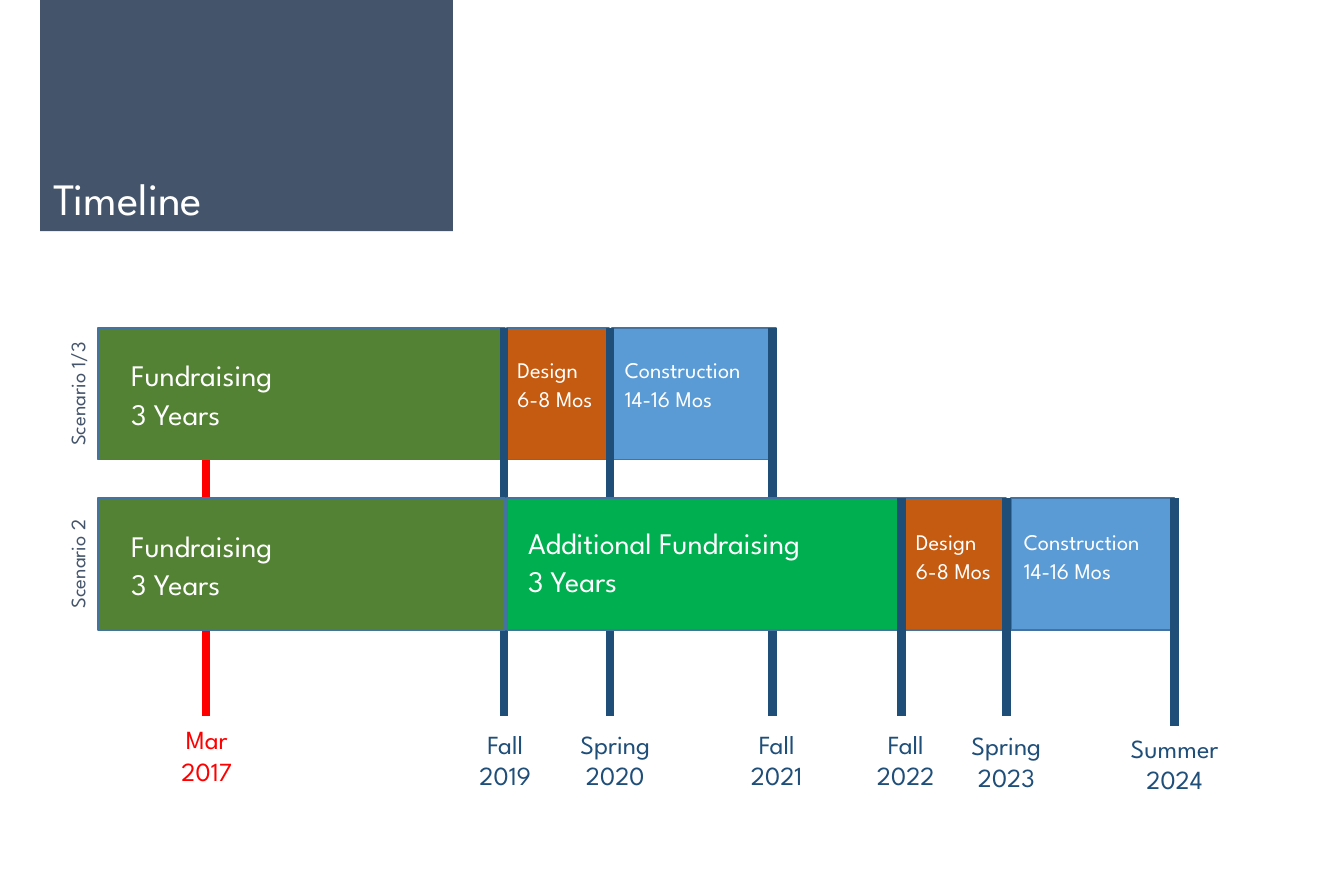
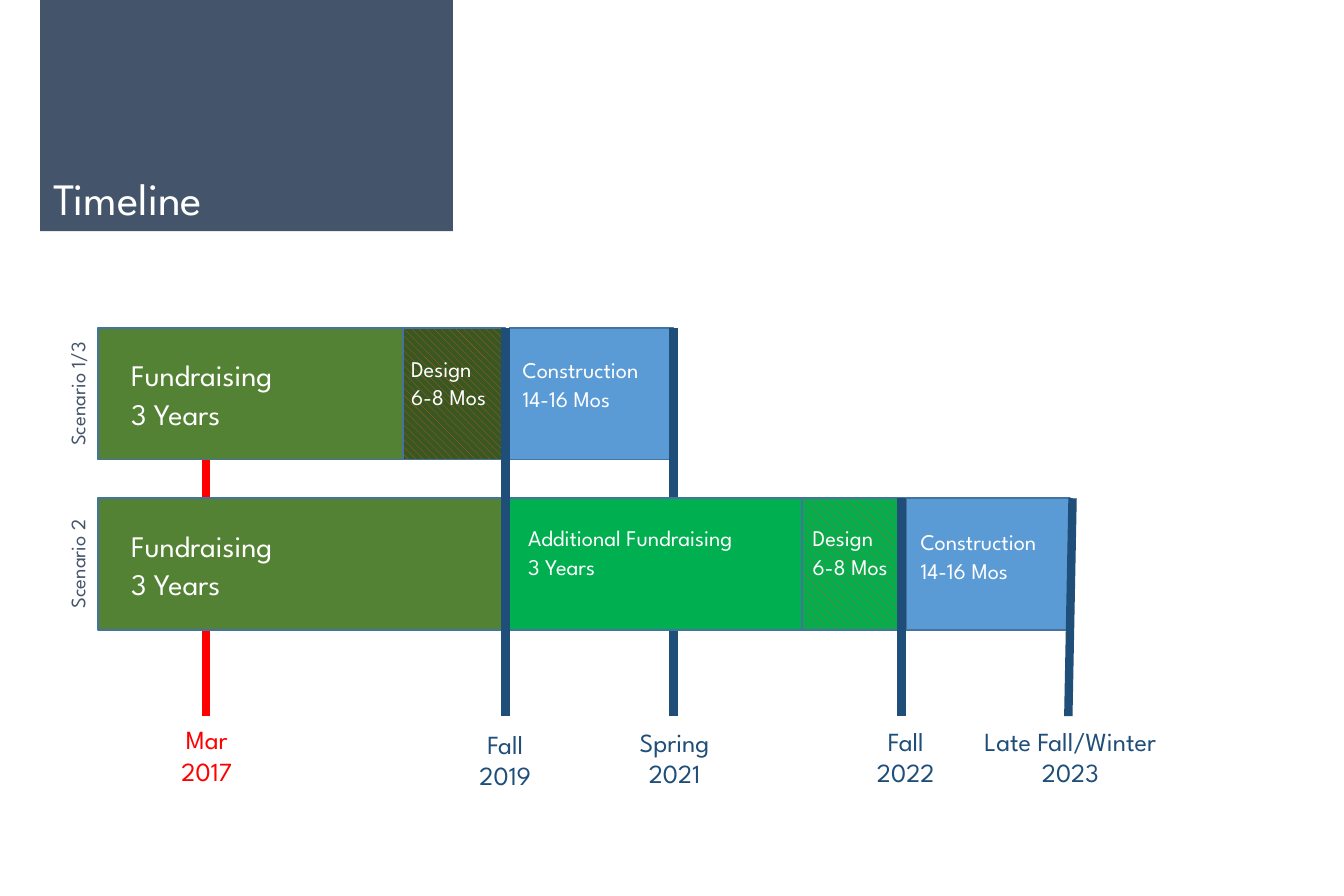
from dataclasses import dataclass, replace
from typing import Optional

from lxml.etree import SubElement
from pptx import Presentation
from pptx.dml.color import RGBColor
from pptx.enum.dml import MSO_PATTERN
from pptx.enum.shapes import MSO_CONNECTOR, MSO_SHAPE
from pptx.enum.text import MSO_ANCHOR, PP_ALIGN
from pptx.oxml.ns import qn
from pptx.util import Cm, Pt


@dataclass(frozen=True)
class Theme:
    font: str = "League Spartan"
    slate: str = "44546A"
    white: str = "FFFFFF"
    red: str = "FF0000"
    navy: str = "1F4E79"
    outline: str = "43739E"
    olive: str = "548235"
    dark_olive: str = "385723"
    green: str = "00B050"
    orange: str = "C55A11"
    blue: str = "5B9BD5"
    title_size: int = 24
    large: int = 16
    date_size: int = 14
    small: int = 12
    scenario_size: int = 11
    marker_width: float = 4.5
    outline_width: float = 1


@dataclass(frozen=True)
class Stage:
    text: str
    width: float
    label_width: float
    fill: str
    size: int
    hatch: Optional[str] = None


@dataclass(frozen=True)
class Marker:
    text: str
    x: float
    label_center: float
    label_top: float
    row: int = 0
    front: bool = False
    label_width: float = 2.18
    lean: float = 0
    bottom: float = 13.54


THEME = Theme()

FUNDRAISING = Stage("Fundraising\n3 Years", 7.7, 3.84, THEME.olive, THEME.large)
ADDITIONAL = Stage("Additional Fundraising\n3 Years", 7.52, 6.88, THEME.green, THEME.large)
DESIGN = Stage("Design\n6-8 Mos", 1.93, 2.13, THEME.orange, THEME.small)
CONSTRUCTION = Stage("Construction\n14-16 Mos", 3.1, 3.48, THEME.blue, THEME.small)
ADDITIONAL_SMALL = replace(ADDITIONAL, size=THEME.small)
DESIGN_IN_FUNDRAISING = replace(DESIGN, fill=THEME.dark_olive, hatch=THEME.orange)
DESIGN_IN_ADDITIONAL = replace(DESIGN, fill=THEME.green, hatch=THEME.orange)

TITLE = "Timeline"
SCENARIOS = ["Scenario 1/3", "Scenario 2"]
ROW_TOPS = [6.2, 9.42]
BAR_HEIGHT = 2.49
START = Marker("Mar\n2017", 3.89, 3.91, 13.56)

# stage, bar left, label shift right, label shift down
TIMELINES = [
    {
        "rows": [
            [(FUNDRAISING, 1.85, 0.38, 0.38),
             (CONSTRUCTION, 11.56, 0, 0.38),
             (DESIGN, 9.58, -0.05, 0.38)],
            [(CONSTRUCTION, 19.1, 0, 0.41),
             (DESIGN, 17.09, -0.03, 0.41),
             (FUNDRAISING, 1.85, 0.38, 0.38),
             (ADDITIONAL, 9.58, 0.15, 0.33)],
        ],
        "markers": [
            Marker("Fall\n2019", 9.53, 9.55, 13.64),
            Marker("Spring\n2020", 11.53, 11.63, 13.64),
            Marker("Fall\n2021", 14.6, 14.68, 13.64),
            Marker("Fall\n2022", 17.04, 17.12, 13.64, 1, True),
            Marker("Spring\n2023", 19.02, 19.02, 13.67, 1, True),
            Marker("Summer\n2024", 22.2, 22.2, 13.72, 1, True, 3.76, bottom=13.72),
        ],
    },
    {
        "rows": [
            [(FUNDRAISING, 1.85, 0.38, 0.38),
             (CONSTRUCTION, 9.63, 0, 0.38),
             (DESIGN_IN_FUNDRAISING, 7.62, -0.1, 0.35)],
            [(CONSTRUCTION, 17.12, 0.03, 0.41),
             (FUNDRAISING, 1.85, 0.38, 0.38),
             (ADDITIONAL_SMALL, 9.58, 0.15, 0.33),
             (DESIGN_IN_ADDITIONAL, 15.16, -0.05, 0.33)],
        ],
        "markers": [
            Marker("Fall\n2019", 9.55, 9.55, 13.64, 0, True),
            Marker("Spring\n2021", 12.73, 12.75, 13.61, label_width=4.47),
            Marker("Fall\n2022", 17.04, 17.12, 13.59, 1, True),
            Marker("Late Fall/Winter\n2023", 20.27, 20.23, 13.59, 1, True, 4.45, -0.08),
        ],
    },
]


def color(value):
    return RGBColor.from_string(value)


def write(shape, text, size, text_color, align=PP_ALIGN.LEFT, spacing=None):
    shape.text_frame.word_wrap = True
    shape.text_frame.text = text
    for paragraph in shape.text_frame.paragraphs:
        paragraph.alignment = align
        if spacing:
            paragraph.line_spacing = spacing
        for run in paragraph.runs:
            run.font.name = THEME.font
            run.font.size = Pt(size)
            run.font.color.rgb = color(text_color)


def add_label(slide, left, top, width, height, *style):
    label = slide.shapes.add_textbox(Cm(left), Cm(top), Cm(width), Cm(height))
    write(label, *style)
    return label


def add_rectangle(slide, left, top, width, height, fill, hatch=None):
    shape = slide.shapes.add_shape(
        MSO_SHAPE.RECTANGLE, Cm(left), Cm(top), Cm(width), Cm(height))
    shape.shadow.inherit = False
    if hatch:
        shape.fill.patterned()
        shape.fill.pattern = MSO_PATTERN.WIDE_DOWNWARD_DIAGONAL
        shape.fill.fore_color.rgb = color(hatch)
        shape.fill.back_color.rgb = color(fill)
    else:
        shape.fill.solid()
        shape.fill.fore_color.rgb = color(fill)
    return shape


def add_title(slide):
    band = add_rectangle(slide, 0.76, 0, 7.8, 4.37, THEME.slate)
    band.line.fill.background()
    band.text_frame.vertical_anchor = MSO_ANCHOR.BOTTOM
    write(band, TITLE, THEME.title_size, THEME.white)


def add_row(slide, index, bars):
    top = ROW_TOPS[index]
    for stage, left, shift_right, shift_down in bars:
        bar = add_rectangle(
            slide, left, top, stage.width, BAR_HEIGHT, stage.fill, stage.hatch)
        bar.line.color.rgb = color(THEME.outline)
        bar.line.width = Pt(THEME.outline_width)
        label_height = 1.73 if stage.size == THEME.large else 1.35
        add_label(slide, left + shift_right, top + shift_down, stage.label_width,
                  label_height, stage.text, stage.size, THEME.white,
                  PP_ALIGN.LEFT, 1.07)
    scenario = add_label(slide, -0.95, top + 0.89, 4.75, 0.71, SCENARIOS[index],
                         THEME.scenario_size, THEME.slate, PP_ALIGN.CENTER, 1.07)
    scenario.rotation = 270


def add_marker(slide, marker, marker_color):
    line = slide.shapes.add_connector(
        MSO_CONNECTOR.STRAIGHT, Cm(marker.x), Cm(ROW_TOPS[marker.row]),
        Cm(marker.x + marker.lean), Cm(marker.bottom))
    line.line.color.rgb = color(marker_color)
    line.line.width = Pt(THEME.marker_width)
    SubElement(line._element.spPr, qn("a:effectLst"))
    add_label(slide, marker.label_center - marker.label_width / 2, marker.label_top,
              marker.label_width, 1.45, marker.text, THEME.date_size, marker_color,
              PP_ALIGN.CENTER)


def add_markers(slide, markers, front):
    for marker in markers:
        if marker.front == front:
            add_marker(slide, marker, THEME.navy)


def add_timeline(presentation, timeline):
    slide = presentation.slides.add_slide(presentation.slide_layouts[6])
    add_title(slide)
    add_marker(slide, START, THEME.red)
    for index, bars in enumerate(timeline["rows"]):
        add_row(slide, index, bars)
        add_markers(slide, timeline["markers"], front=index == 1)


def main():
    presentation = Presentation()
    presentation.slide_width = Cm(25.4)
    presentation.slide_height = Cm(16.94)
    for timeline in TIMELINES:
        add_timeline(presentation, timeline)
    presentation.save("out.pptx")


if __name__ == "__main__":
    main()
